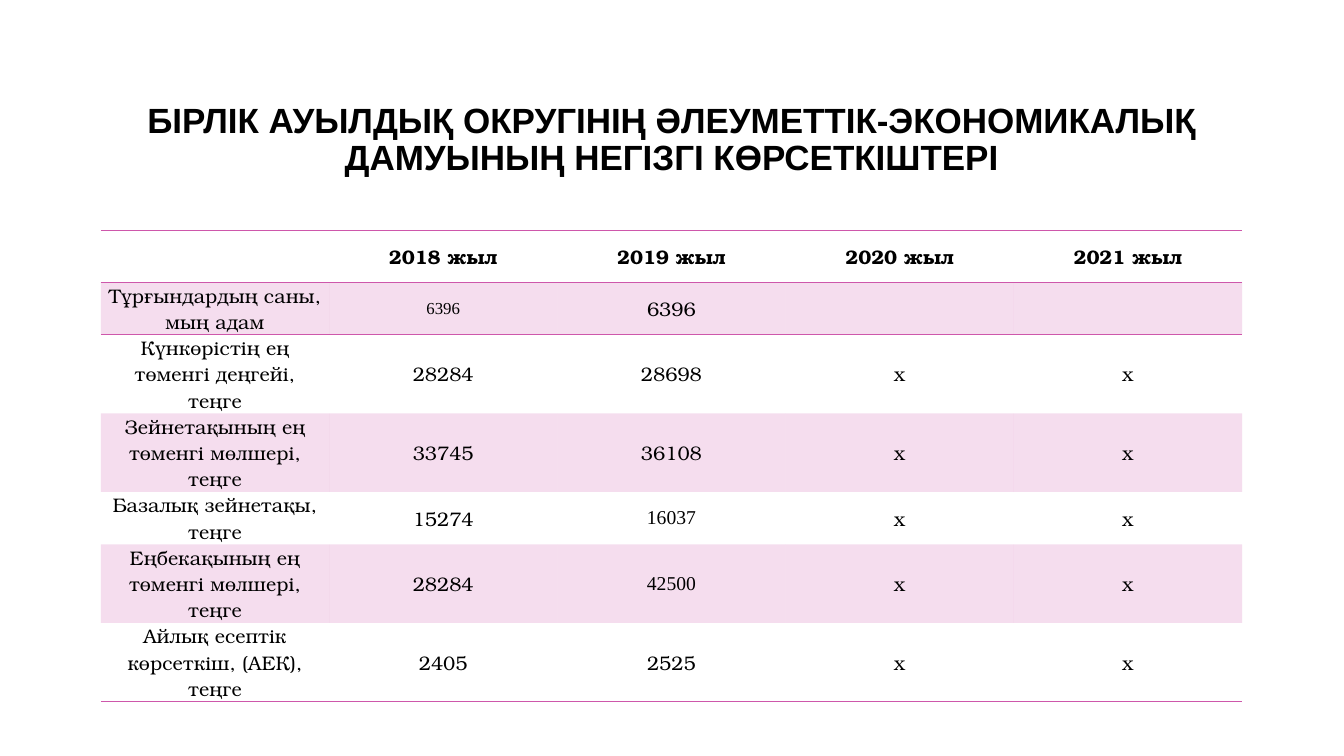
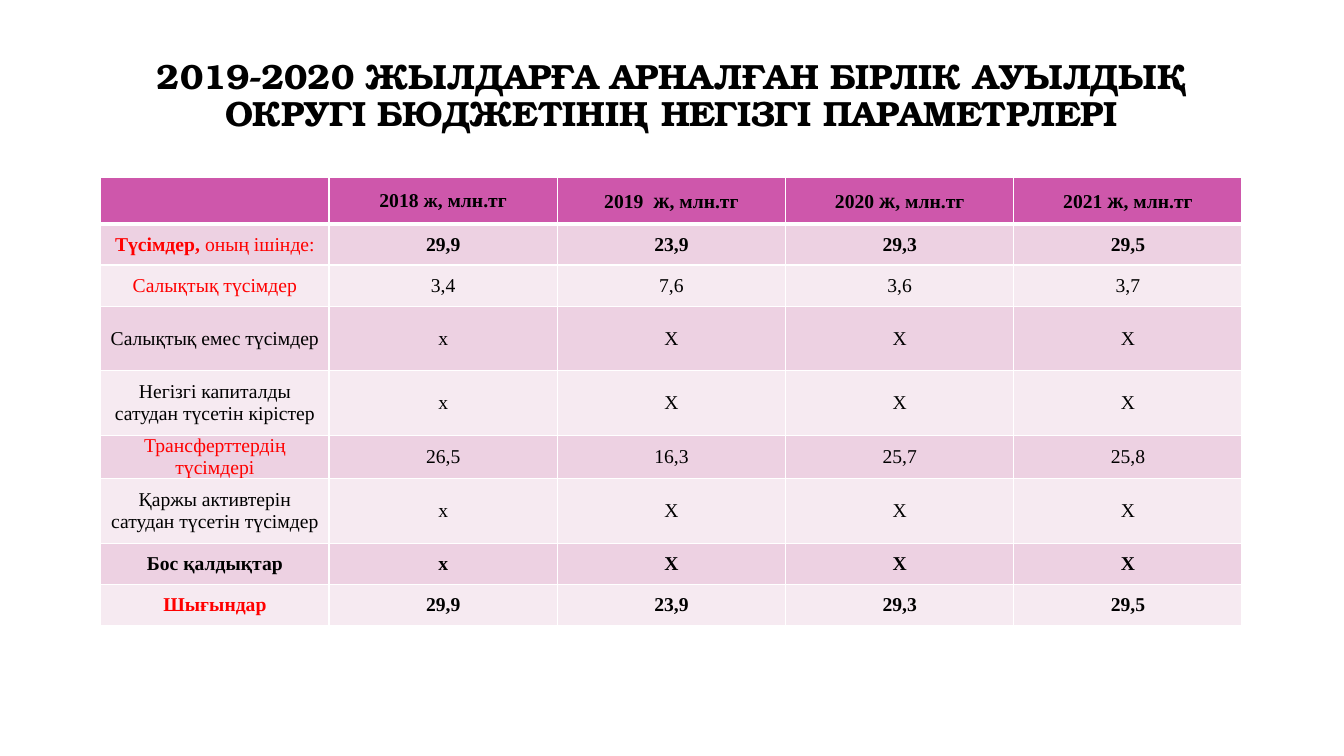
from dataclasses import dataclass

from lxml import etree
from pptx import Presentation
from pptx.dml.color import RGBColor
from pptx.enum.text import MSO_ANCHOR, MSO_AUTO_SIZE, PP_ALIGN
from pptx.oxml.ns import qn
from pptx.util import Inches, Pt

CENTER = PP_ALIGN.CENTER
MIDDLE = MSO_ANCHOR.MIDDLE
NO_AUTOFIT = MSO_AUTO_SIZE.NONE
TITLE_ONLY = 5
PLAIN_TABLE = "{2D5ABB26-0587-4C30-8999-92F81FD0307C}"


@dataclass(frozen=True)
class Theme:
    ink: str = "000000"
    red: str = "FF0000"
    pink: str = "CE57AB"
    dark_band: str = "EDD1E2"
    light_band: str = "F6EAF1"
    white: str = "FFFFFF"
    sans: str = "Arial"
    bookish: str = "TeX Gyre Bonum"
    roman: str = "Times New Roman"
    title_size: float = 25
    large_size: float = 16
    body_size: float = 14
    small_size: float = 12
    left: float = 1
    width: float = 11.32


THEME = Theme()


def write(para, text, font, size=THEME.body_size, color=THEME.ink, bold=False):
    span = para.add_run()
    span.text = text
    span.font.name = font
    span.font.size = Pt(size)
    span.font.color.rgb = RGBColor.from_string(color)
    span.font.bold = bold


def draw_edge(cell, side, color, points):
    """Add one cell border; call in the order L, R, T, B and before filling."""
    properties = cell._tc.get_or_add_tcPr()
    line = etree.SubElement(properties, qn(f"a:ln{side}"), w=str(Pt(points)))
    fill = etree.SubElement(line, qn("a:solidFill"))
    etree.SubElement(fill, qn("a:srgbClr"), val=color)


RED = {"color": THEME.red}
ROMAN = {"font": THEME.roman}
LARGE = {"size": THEME.large_size}

# Each row: height, bold, cells. A cell is text or a list of (text, format).
indicator_rows = [
    (0.51, True, ["", "2018 жыл", "2019 жыл", "2020 жыл", "2021 жыл"]),
    (0.52, False, ["Тұрғындардың саны, мың адам",
                   [("6396", {"font": THEME.roman, "size": THEME.small_size})],
                   "6396", "", ""]),
    (0.78, False, ["Күнкөрістің ең төменгі деңгейі, теңге", "28284", "28698", "х", "х"]),
    (0.78, False, ["Зейнетақының ең төменгі мөлшері, теңге", "33745", "36108", "х", "х"]),
    (0.52, False, ["Базалық зейнетақы, теңге", "15274", [("16037", ROMAN)], "х", "х"]),
    (0.78, False, ["Еңбекақының ең төменгі мөлшері, теңге", "28284",
                   [("42500", ROMAN)], "х", "х"]),
    (0.78, False, ["Айлық есептік көрсеткіш, (АЕК), теңге", "2405", "2525", "х", "х"]),
]
year_heads = [[(year, {}), ("ж", LARGE), (", млн.тг", {})]
              for year in ("2019  ", "2020 ", "2021 ")]
no_values = ["х", "Х", "Х", "Х"]
totals = ["29,9", "23,9", "29,3", "29,5"]
budget_rows = [
    (0.46, True, ["", "2018 ж, млн.тг", *year_heads]),
    (0.41, True, [[("Түсімдер, ", RED),
                   ("оның ішінде:", {"color": THEME.red, "bold": False})], *totals]),
    (0.41, False, [[("Салықтық түсімдер", RED)], "3,4", "7,6", "3,6", "3,7"]),
    (0.64, False, ["Салықтық емес түсімдер", *no_values]),
    (0.64, False, ["Негізгі капиталды сатудан түсетін кірістер", *no_values]),
    (0.43, False, [[("Трансферттердің түсімдері", RED)], "26,5", "16,3", "25,7", "25,8"]),
    (0.64, False, ["Қаржы активтерін сатудан түсетін түсімдер", *no_values]),
    (0.41, True, ["Бос қалдықтар", *no_values]),
    (0.41, True, [[("Шығындар", RED)], *totals]),
]

# Edges: border widths by side for the header, first, middle and last rows.
# Fills: colour and opacity in percent for the header, odd and even rows.
pages = [
    {
        "title": "БІРЛІК АУЫЛДЫҚ ОКРУГІНІҢ ӘЛЕУМЕТТІК-ЭКОНОМИКАЛЫҚ "
                 "ДАМУЫНЫҢ НЕГІЗГІ КӨРСЕТКІШТЕРІ",
        "title_font": THEME.sans, "title_top": 0.67, "title_height": 1.45,
        "table_top": 2.29, "rows": indicator_rows, "font": THEME.bookish,
        "edge_color": THEME.pink,
        "edges": [{"T": 1, "B": 1}, {"T": 1}, {}, {"B": 1}],
        "fills": [None, (THEME.pink, 20), None],
    },
    {
        "title": "2019-2020 ЖЫЛДАРҒА АРНАЛҒАН БІРЛІК АУЫЛДЫҚ ОКРУГІ "
                 "БЮДЖЕТІНІҢ НЕГІЗГІ ПАРАМЕТРЛЕРІ",
        "title_font": THEME.bookish, "title_top": 0.4, "title_height": 1.12,
        "table_top": 1.76, "rows": budget_rows, "font": THEME.roman,
        "edge_color": THEME.white,
        "edges": [{"L": 1, "R": 1, "T": 1, "B": 3}, {"L": 1, "R": 1, "T": 3, "B": 1},
                  *[{"L": 1, "R": 1, "T": 1, "B": 1}] * 2],
        "fills": [(THEME.pink, 100), (THEME.dark_band, 100), (THEME.light_band, 100)],
    },
]

deck = Presentation()
deck.slide_width = Inches(13.33)
deck.slide_height = Inches(7.5)

for content in pages:
    page = deck.slides.add_slide(deck.slide_layouts[TITLE_ONLY])
    title = page.shapes.title
    title.left, title.top = Inches(THEME.left), Inches(content["title_top"])
    title.width, title.height = Inches(THEME.width), Inches(content["title_height"])
    title.text_frame.word_wrap = True
    title.text_frame.auto_size = NO_AUTOFIT
    title.text_frame.vertical_anchor = MIDDLE
    para = title.text_frame.paragraphs[0]
    para.alignment = CENTER
    para.line_spacing = 0.9
    write(para, content["title"], content["title_font"], THEME.title_size, bold=True)

    rows = content["rows"]
    column_count = len(rows[0][2])
    frame = page.shapes.add_table(
        len(rows), column_count, Inches(THEME.left), Inches(content["table_top"]),
        Inches(THEME.width), Inches(sum(height for height, _, _ in rows)))
    next(frame.element.iter(qn("a:tableStyleId"))).text = PLAIN_TABLE
    table = frame.table
    table.first_row = table.horz_banding = False
    for column in table.columns:
        column.width = Inches(THEME.width / column_count)

    for row_index, (height, bold, cells) in enumerate(rows):
        table.rows[row_index].height = Inches(height)
        is_last = row_index == len(rows) - 1
        edges = content["edges"][3 if is_last else min(row_index, 2)]
        fill = content["fills"][0 if row_index == 0 else 2 - row_index % 2]
        for column_index, spans in enumerate(cells):
            cell = table.cell(row_index, column_index)
            cell.margin_left = cell.margin_right = Inches(0.07)
            cell.margin_top = cell.margin_bottom = 0
            cell.vertical_anchor = MIDDLE
            for side, points in edges.items():
                draw_edge(cell, side, content["edge_color"], points)
            if fill:
                color, opacity = fill
                cell.fill.solid()
                cell.fill.fore_color.rgb = RGBColor.from_string(color)
                if opacity < 100:
                    paint = cell._tc.tcPr.find(f"{qn('a:solidFill')}/{qn('a:srgbClr')}")
                    etree.SubElement(paint, qn("a:alpha"), val=str(opacity * 1000))
            else:
                cell.fill.background()
            para = cell.text_frame.paragraphs[0]
            para.alignment = CENTER
            if isinstance(spans, str):
                spans = [(spans, {})] if spans else []
            for text, style in spans:
                write(para, text, **{"font": content["font"], "bold": bold, **style})

deck.save("out.pptx")
